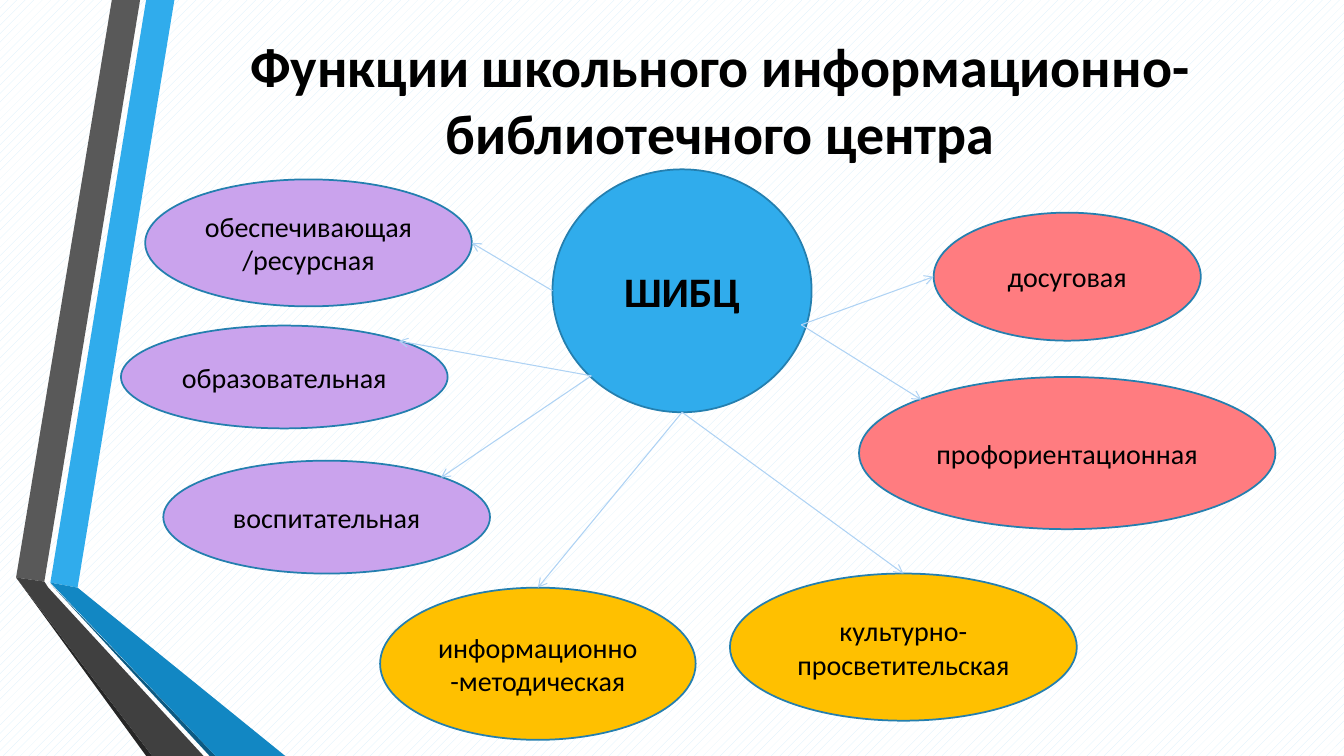
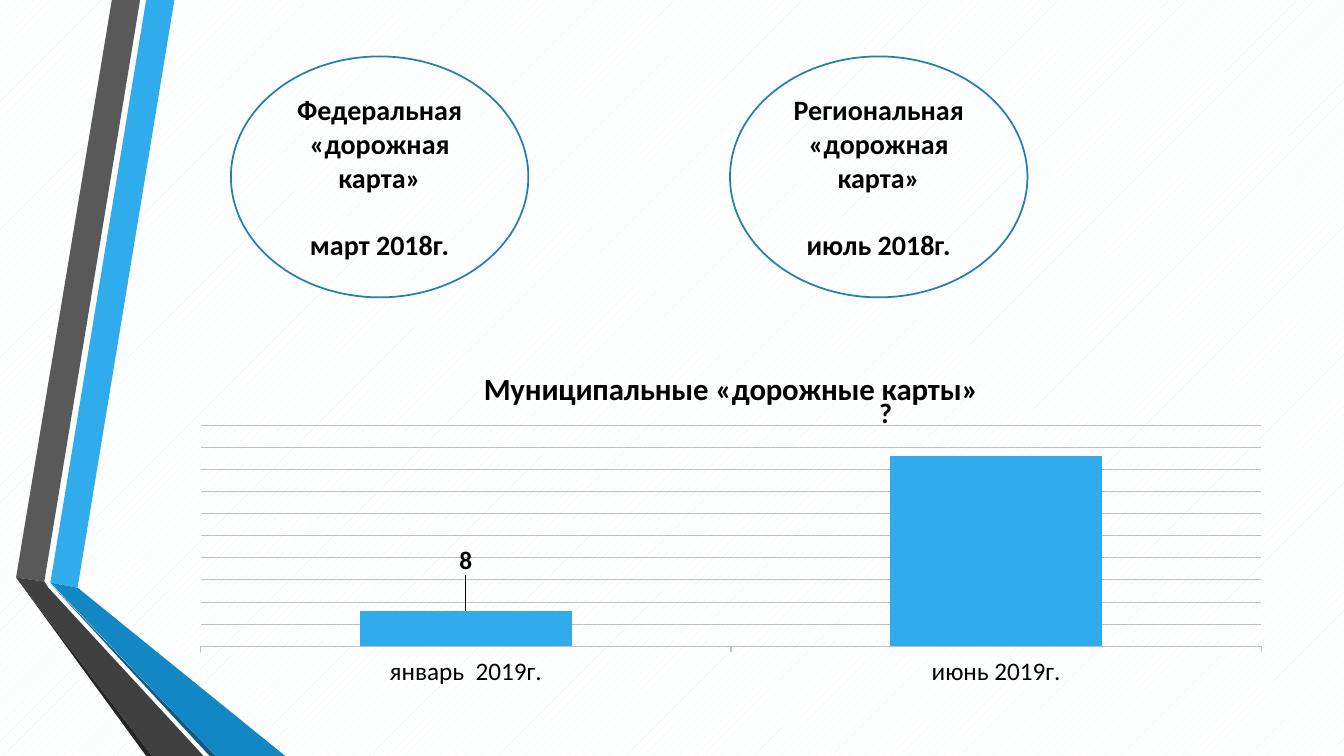
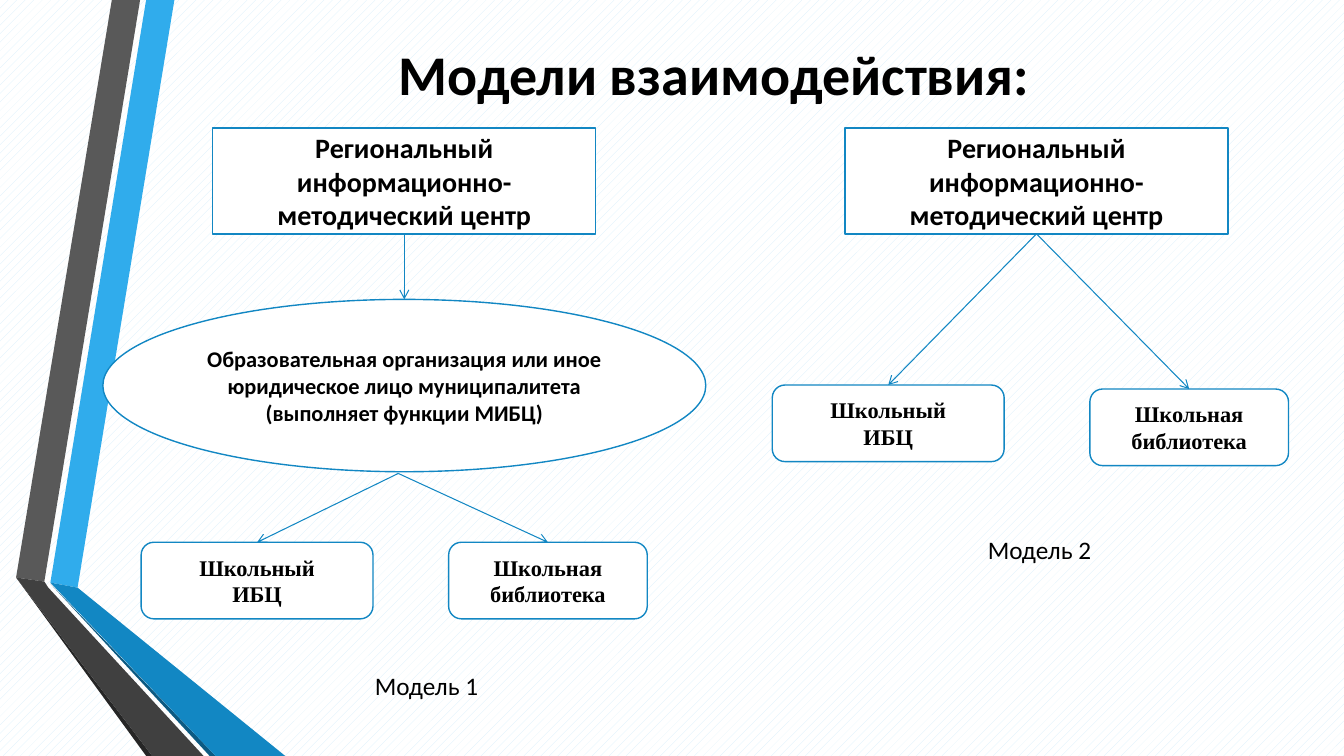
import dataclasses

import lxml.etree
import pptx
import pptx.chart.data
import pptx.dml.color
import pptx.enum.chart
import pptx.enum.dml
import pptx.enum.shapes
import pptx.enum.text
import pptx.oxml
import pptx.oxml.ns
import pptx.util

PX = 9144
SHAPES = pptx.enum.shapes.MSO_SHAPE
LOW, MIDDLE, HIGH = 0.15, 0.5, 0.85


@dataclasses.dataclass(frozen=True)
class Theme:
    """Colours, fonts and type sizes of the deck."""

    black: str = "000000"
    white: str = "FFFFFF"
    mist: str = "D6EEFB"
    blue: str = "30ACEC"
    deep_blue: str = "1287C3"
    shade_blue: str = "0C5A82"
    outline: str = "247FAF"
    spoke: str = "AED2F4"
    grey: str = "595959"
    dark_grey: str = "404040"
    shade_grey: str = "262626"
    grid: str = "BFBFBF"
    violet: str = "CAA3ED"
    amber: str = "FFC000"
    coral: str = "FF7C80"
    sans: str = "Calibri"
    serif: str = "Times New Roman"
    title: float = 40
    hub: float = 30
    heading: float = 22
    body: float = 20
    label: float = 18
    small: float = 16


THEME = Theme()


@dataclasses.dataclass(frozen=True)
class Box:
    """A rectangle in px."""

    left: int
    top: int
    width: int
    height: int

    def inside(self, left, top, width, height):
        """Return a box offset from this one's corner."""
        return Box(self.left + left, self.top + top, width, height)

    def at(self, across, down):
        """Return the point at the given fractions of the box."""
        return self.left + across * self.width, self.top + down * self.height

    def emu(self):
        """Return left, top, width and height in EMU."""
        return [side * PX for side in (self.left, self.top, self.width, self.height)]


def rgb(colour):
    """Turn a hex string into a colour."""
    return pptx.dml.color.RGBColor.from_string(colour)


def style_font(font, size, bold=False, face=THEME.sans):
    """Format a font in black."""
    font.name, font.size, font.bold = face, pptx.util.Pt(size), bold
    font.color.rgb = rgb(THEME.black)


def write(frame, text, size=THEME.body, bold=False, face=THEME.sans, align="CENTER",
          anchor="MIDDLE", gap=0):
    """Write one paragraph per line of text, with a gap before the later ones."""
    frame.word_wrap = True
    frame.auto_size = pptx.enum.text.MSO_AUTO_SIZE.NONE
    frame.vertical_anchor = pptx.enum.text.MSO_ANCHOR[anchor]
    for index, line in enumerate(text.split("\n")):
        para = frame.add_paragraph() if index else frame.paragraphs[0]
        para.alignment = pptx.enum.text.PP_ALIGN[align]
        para.space_before = pptx.util.Pt(gap if index else 0)
        span = para.add_run()
        span.text = line
        style_font(span.font, size, bold, face)


def add_node(page, box, text, kind=SHAPES.OVAL, fill=None, line=THEME.outline, weight=1.25,
             **text_format):
    """Draw an outlined shape with centred text and return its box."""
    shape = page.shapes.add_shape(kind, *box.emu())
    shape.shadow.inherit = False
    if fill:
        shape.fill.solid()
        shape.fill.fore_color.rgb = rgb(fill)
    else:
        shape.fill.background()
    shape.line.color.rgb = rgb(line)
    shape.line.width = pptx.util.Pt(weight)
    write(shape.text_frame, text, **text_format)
    return box


def add_arrow(page, start, end, colour):
    """Draw a thin straight arrow between two points."""
    ends = [round(value * PX) for value in (*start, *end)]
    arrow = page.shapes.add_connector(pptx.enum.shapes.MSO_CONNECTOR.STRAIGHT, *ends)
    arrow.line.color.rgb = rgb(colour)
    arrow.line.width = pptx.util.Pt(0.75)
    line = arrow.line._get_or_add_ln()
    lxml.etree.SubElement(line, pptx.oxml.ns.qn("a:tailEnd"), type="arrow")
    lxml.etree.SubElement(arrow.element.spPr, pptx.oxml.ns.qn("a:effectLst"))


def add_text(page, box, text, **text_format):
    """Place a text box."""
    frame = page.shapes.add_textbox(*box.emu()).text_frame
    write(frame, text, anchor="TOP", **text_format)


def add_page(deck, title=None, box=None):
    """Add a page, with a title when one is given."""
    page = deck.slides.add_slide(deck.slide_layouts[5 if title else 6])
    if title:
        holder = page.shapes.title
        holder.left, holder.top, holder.width, holder.height = box.emu()
        write(holder.text_frame, title, size=THEME.title, bold=True)
    return page


def dress_master(deck, page):
    """Give the master its patterned background and folded ribbons."""
    fill = deck.slide_master.background.fill
    fill.patterned()
    fill.pattern = pptx.enum.dml.MSO_PATTERN.PERCENT_20
    fill.fore_color.rgb, fill.back_color.rgb = rgb(THEME.mist), rgb(THEME.white)
    ribbons = [
        (THEME.blue, [(50, 578), (77, 583), (173, 0), (145, 0)]),
        (THEME.grey, [(139, 0), (111, 0), (16, 573), (44, 577)]),
        (THEME.shade_grey, [(16, 573), (145, 750), (151, 750)]),
        (THEME.shade_blue, [(50, 579), (208, 750), (214, 750)]),
        (THEME.deep_blue, [(50, 578), (214, 750), (283, 750), (77, 583)]),
        (THEME.dark_grey, [(202, 750), (48, 583), (44, 577), (16, 573), (151, 750)]),
    ]
    for index, (colour, points) in enumerate(ribbons):
        outline = page.shapes.build_freeform(*points[0], scale=PX)
        outline.add_line_segments(points[1:], close=True)
        ribbon = outline.convert_to_shape()
        ribbon.shadow.inherit = False
        ribbon.fill.solid()
        ribbon.fill.fore_color.rgb = rgb(colour)
        ribbon.line.fill.background()
        ribbon.element.nvSpPr.cNvPr.set("id", str(100 + index))
        deck.slide_master.shapes.element.insert(2 + index, ribbon.element)


def draw_functions(page, box):
    """Draw the centre and its functions, joined by arrows."""
    hub = add_node(page, box.inside(428, 0, 257, 241), "ШИБЦ", fill=THEME.blue,
                   size=THEME.hub, bold=True)
    left, bottom = hub.at(0, MIDDLE), hub.at(MIDDLE, 1)
    lower_left, right = hub.at(LOW, HIGH), hub.at(0.96, 0.64)
    functions = [
        ("обеспечивающая /ресурсная", (24, 10, 324, 126), THEME.violet, left, (1, MIDDLE)),
        ("образовательная", (0, 155, 324, 102), THEME.violet, lower_left, (HIGH, LOW)),
        ("воспитательная", (42, 289, 324, 112), THEME.violet, lower_left, (HIGH, LOW)),
        ("информационно-методическая", (257, 415, 313, 151), THEME.amber, bottom, (MIDDLE, 0)),
        ("культурно-просветительская", (604, 401, 344, 146), THEME.amber, bottom, (MIDDLE, 0)),
        ("досуговая", (806, 43, 265, 127), THEME.coral, right, (0, MIDDLE)),
        ("профориентационная", (732, 206, 413, 151), THEME.coral, right, (LOW, LOW)),
    ]
    for text, place, fill, start, site in functions:
        node = add_node(page, box.inside(*place), text, fill=fill)
        add_arrow(page, start, node.at(*site), THEME.spoke)


def draw_road_maps(page, box):
    """Draw the federal and regional road maps side by side."""
    maps = ["Федеральная «дорожная карта»\nмарт 2018г.",
            "Региональная «дорожная карта»\nиюль 2018г."]
    for index, text in enumerate(maps):
        add_node(page, box.inside(495 * index, 0, 295, 239), text, bold=True, gap=24)


def manual_layout(target=None, **fractions):
    """Build a chart layout element from fractions of the chart."""
    rows = [("layoutTarget", target)] if target else []
    rows += [(key + "Mode", "edge") for key in ("x", "y") if target]
    rows += fractions.items()
    body = "".join(f'<c:{key} val="{value}"/>' for key, value in rows)
    return pptx.oxml.parse_xml(f'<c:layout {pptx.oxml.ns.nsdecls("c")}>'
                               f"<c:manualLayout>{body}</c:manualLayout></c:layout>")


def draw_municipal_chart(page, box):
    """Draw the column chart of municipal road maps."""
    data = pptx.chart.data.CategoryChartData()
    data.categories = ["январь  2019г.", "июнь 2019г."]
    data.add_series("Series 1", [8, 43])
    kind = pptx.enum.chart.XL_CHART_TYPE.COLUMN_CLUSTERED
    chart = page.shapes.add_chart(kind, *box.emu(), data).chart
    style_font(chart.font, THEME.label)
    chart.has_legend = False
    chart.has_title = True
    title = chart.chart_title
    title.include_in_layout = False
    title.text_frame.text = "Муниципальные «дорожные карты»"
    style_font(title.text_frame.paragraphs[0].runs[0].font, THEME.heading, bold=True)

    values, dates = chart.value_axis, chart.category_axis
    values.minimum_scale, values.maximum_scale, values.major_unit = 0, 50, 5
    values.visible = False
    values.has_major_gridlines = True
    dates.major_tick_mark = pptx.enum.chart.XL_TICK_MARK.OUTSIDE
    for line in (values.major_gridlines.format.line, dates.format.line):
        line.color.rgb = rgb(THEME.grid)
        line.width = pptx.util.Pt(0.75)

    plot = chart.plots[0]
    plot.gap_width = 150
    plot.vary_by_categories = False
    series = plot.series[0]
    series.format.fill.solid()
    series.format.fill.fore_color.rgb = rgb(THEME.blue)
    series.data_labels.show_value = False
    label = series.points[0].data_label
    style_font(label.font, THEME.label, bold=True)
    label.position = pptx.enum.chart.XL_LABEL_POSITION.OUTSIDE_END

    mark = chart.element.xpath(".//c:dLbl")[0]
    mark.insert(1, manual_layout(x=0, y=-0.09))
    area = chart.element.xpath(".//c:plotArea")[0]
    for old in area.xpath("./c:layout"):
        area.remove(old)
    area.insert(0, manual_layout("inner", x=0.02, y=0.22, w=0.96, h=0.64))
    add_text(page, box.inside(685, 40, 43, 44), "?", bold=True, align="LEFT")


def draw_centre(page, box):
    """Draw the regional centre and return its box."""
    return add_node(page, box, "Региональный информационно-методический центр",
                    kind=SHAPES.RECTANGLE, fill=THEME.white, line=THEME.deep_blue, weight=1,
                    bold=True)


def draw_schools(page, box, start, drop=0):
    """Draw the school pair at both ends of the box, with arrows from a point."""
    schools = [("Школьный\nИБЦ", box.inside(0, 0, 230, 76)),
               ("Школьная\nбиблиотека", box.inside(box.width - 197, drop, 197, 76))]
    for text, place in schools:
        add_node(page, place, text, kind=SHAPES.ROUNDED_RECTANGLE, fill=THEME.white,
                 line=THEME.deep_blue, weight=1, size=THEME.small, bold=True, face=THEME.serif)
        add_arrow(page, start, place.at(MIDDLE, 0), THEME.deep_blue)


def draw_municipal_model(page, box):
    """Draw the model with a municipal body in between."""
    centre = draw_centre(page, box.inside(109, 0, 380, 105))
    body = add_node(page, box.inside(0, 170, 598, 171),
                    "Образовательная организация или иное юридическое лицо муниципалитета\n"
                    "(выполняет функции МИБЦ)",
                    fill=THEME.white, line=THEME.deep_blue, weight=1, size=THEME.small, bold=True)
    add_arrow(page, centre.at(MIDDLE, 1), body.at(MIDDLE, 0), THEME.deep_blue)
    draw_schools(page, box.inside(38, 411, 502, 76), body.at(0.49, 1.01))
    add_text(page, box.inside(66, 533, 510, 40), "Модель 1", size=THEME.label)


def draw_direct_model(page, box):
    """Draw the model where the centre works with schools directly."""
    centre = draw_centre(page, box.inside(72, 0, 380, 105))
    draw_schools(page, box.inside(0, 255, 512, 76), centre.at(MIDDLE, 1), drop=4)
    add_text(page, box.inside(10, 398, 510, 40), "Модель 2", size=THEME.label)


def main():
    """Build and save the deck."""
    deck = pptx.Presentation()
    deck.slide_width, deck.slide_height = 1333 * PX, 750 * PX

    functions = add_page(deck, "Функции школьного информационно-библиотечного центра",
                         Box(166, 2, 1096, 192))
    dress_master(deck, functions)
    draw_functions(functions, Box(120, 168, 1145, 566))

    road_maps = add_page(deck)
    draw_municipal_chart(road_maps, Box(177, 347, 1096, 342))
    draw_road_maps(road_maps, Box(229, 56, 790, 239))

    models = add_page(deck, "Модели взаимодействия:", Box(160, -2, 1096, 149))
    draw_municipal_model(models, Box(102, 127, 598, 573))
    draw_direct_model(models, Box(766, 127, 520, 438))

    deck.save("out.pptx")


if __name__ == "__main__":
    main()
